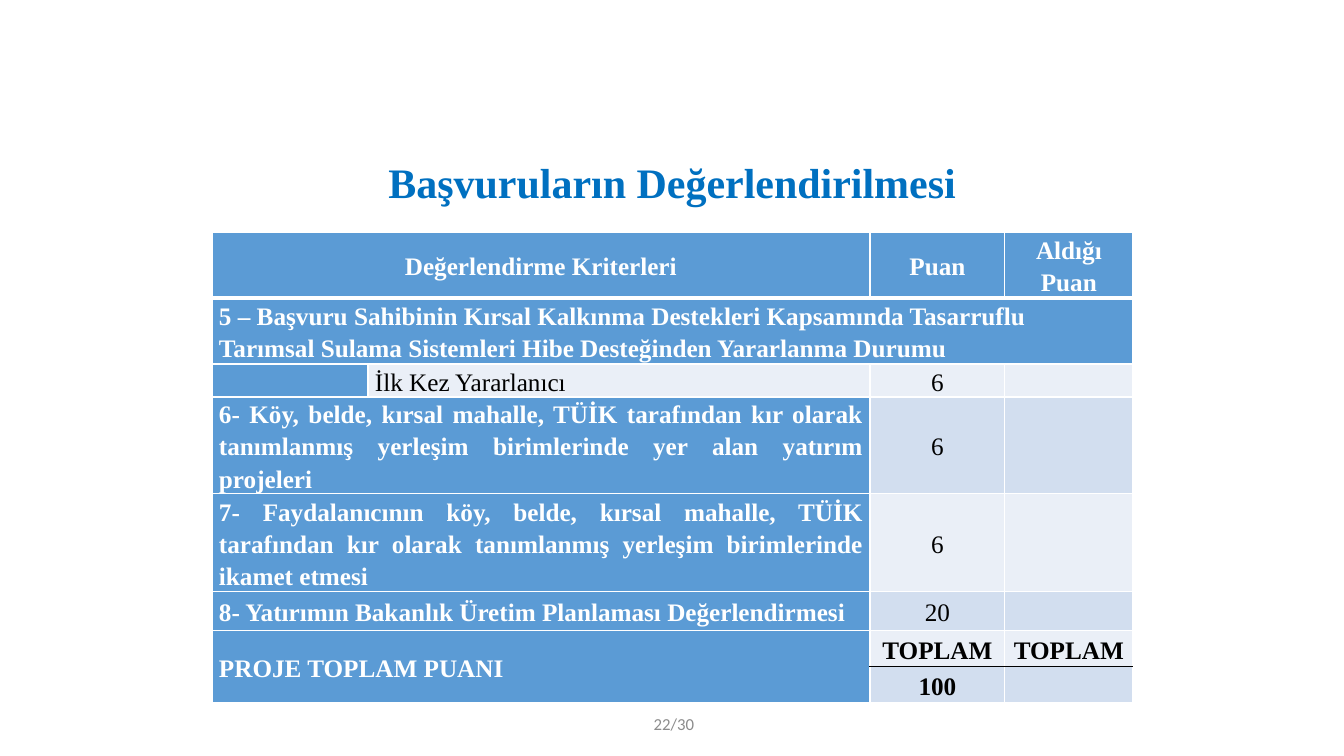
from dataclasses import dataclass

from lxml import etree
from pptx import Presentation
from pptx.dml.color import RGBColor
from pptx.enum.text import MSO_ANCHOR, PP_ALIGN
from pptx.oxml.ns import qn
from pptx.util import Pt

EMU_PER_PX = 914400 / 100.8
MIDDLE = MSO_ANCHOR.MIDDLE
LEFT, CENTER = PP_ALIGN.LEFT, PP_ALIGN.CENTER
RIGHT, JUSTIFY = PP_ALIGN.RIGHT, PP_ALIGN.JUSTIFY
TITLE_ONLY_LAYOUT = 5


@dataclass(frozen=True)
class Theme:
    title: str = "0070C0"
    header: str = "5B9BD5"
    light_band: str = "EAEFF7"
    dark_band: str = "D2DEEF"
    white: str = "FFFFFF"
    black: str = "000000"
    muted: str = "8C8C8C"
    serif: str = "Times New Roman"
    sans: str = "Calibri"
    title_size: int = 30
    table_size: int = 18
    table_leading: int = 23
    number_size: int = 12


THEME = Theme()

COLUMN_WIDTHS = [156, 502, 135, 128]
ROW_HEIGHTS = [66, 66, 33, 96, 98, 39, 36, 36]
MERGES = [(0, 0, 0, 1), (1, 0, 1, 3), (3, 0, 3, 1), (4, 0, 4, 1), (5, 0, 5, 1), (6, 0, 7, 1)]
CRITERIA = [
    ["Değerlendirme Kriterleri", "", "Puan", "Aldığı Puan"],
    ["5 – Başvuru Sahibinin Kırsal Kalkınma Destekleri Kapsamında Tasarruflu "
     "Tarımsal Sulama Sistemleri Hibe Desteğinden Yararlanma Durumu", "", "", ""],
    ["", "İlk Kez Yararlanıcı", "6", ""],
    ["6- Köy, belde, kırsal mahalle, TÜİK tarafından kır olarak tanımlanmış "
     "yerleşim birimlerinde yer alan yatırım projeleri", "", "6", ""],
    ["7- Faydalanıcının köy, belde, kırsal mahalle, TÜİK tarafından kır olarak "
     "tanımlanmış yerleşim birimlerinde ikamet etmesi", "", "6", ""],
    ["8- Yatırımın Bakanlık Üretim Planlaması Değerlendirmesi", "", "20", ""],
    ["PROJE TOPLAM PUANI", "", "TOPLAM", "TOPLAM"],
    ["", "", "100", ""],
]
TOTAL_ROW = 6


def px(length):
    return round(length * EMU_PER_PX)


def write_text(frame, text, *, size, color, font=THEME.serif, bold=False,
               align=LEFT, line_spacing=1.0):
    frame.word_wrap = True
    paragraph = frame.paragraphs[0]
    paragraph.alignment = align
    paragraph.line_spacing = line_spacing
    paragraph.space_before = paragraph.space_after = Pt(0)
    run = paragraph.add_run()
    run.text = text
    run.font.name = font
    run.font.size = Pt(size)
    run.font.bold = bold
    run.font.color.rgb = RGBColor.from_string(color)


def set_borders(cell, **changes):
    """Draws thin white borders; changes maps a side to (colour, points)."""
    properties = cell._tc.get_or_add_tcPr()
    for position, side in enumerate("LRTB"):
        color, points = changes.get(side, (THEME.white, 1))
        line = etree.Element(qn(f"a:ln{side}"), w=str(Pt(points)))
        fill = etree.SubElement(line, qn("a:solidFill"))
        etree.SubElement(fill, qn("a:srgbClr"), val=color)
        properties.insert(position, line)


def add_title(slide, left, top, width, height):
    title = slide.shapes.title
    title.left, title.top, title.width, title.height = map(px, (left, top, width, height))
    title.text_frame.vertical_anchor = MIDDLE
    write_text(title.text_frame, "Başvuruların Değerlendirilmesi", size=THEME.title_size,
               color=THEME.title, bold=True, align=CENTER, line_spacing=0.9)


def format_cell(cell, row, column, text):
    is_header = row < 2 or column == 0 or (column == 1 and row != 2)
    band = THEME.dark_band if row % 2 else THEME.light_band
    cell.fill.solid()
    cell.fill.fore_color.rgb = RGBColor.from_string(THEME.header if is_header else band)
    cell.margin_left = cell.margin_right = px(7)
    cell.margin_top = cell.margin_bottom = 0
    cell.vertical_anchor = MIDDLE

    # Thick rule under the heading, black rule under the total labels
    if row == 0:
        set_borders(cell, B=(THEME.white, 3))
    elif row == 1:
        set_borders(cell, T=(THEME.white, 3))
    elif row == TOTAL_ROW and column > 1:
        set_borders(cell, B=(THEME.black, 1))
    elif row > TOTAL_ROW and column > 1:
        set_borders(cell, T=(THEME.black, 1))
    else:
        set_borders(cell)

    if text:
        if row == 0 or column > 1:
            align = CENTER
        else:
            align = JUSTIFY if row > 2 else LEFT
        write_text(cell.text_frame, text, size=THEME.table_size,
                   color=THEME.white if is_header else THEME.black,
                   bold=is_header or row >= TOTAL_ROW, align=align,
                   line_spacing=Pt(THEME.table_leading))


def add_criteria_table(slide, left, top):
    frame = slide.shapes.add_table(len(ROW_HEIGHTS), len(COLUMN_WIDTHS), px(left), px(top),
                                   px(sum(COLUMN_WIDTHS)), px(sum(ROW_HEIGHTS)))
    table = frame.table
    for column, width in zip(table.columns, COLUMN_WIDTHS):
        column.width = px(width)
    for row, height in zip(table.rows, ROW_HEIGHTS):
        row.height = px(height)
    for first_row, first_column, last_row, last_column in MERGES:
        table.cell(first_row, first_column).merge(table.cell(last_row, last_column))
    for row, texts in enumerate(CRITERIA):
        for column, text in enumerate(texts):
            format_cell(table.cell(row, column), row, column, text)


def add_page_number(slide, left, top, width, height):
    box = slide.shapes.add_textbox(*map(px, (left, top, width, height)))
    box.text_frame.vertical_anchor = MIDDLE
    write_text(box.text_frame, "22/30", size=THEME.number_size, color=THEME.muted,
               font=THEME.sans, align=RIGHT)


def main():
    presentation = Presentation()
    presentation.slide_width, presentation.slide_height = px(1344), px(756)
    slide = presentation.slides.add_slide(presentation.slide_layouts[TITLE_ONLY_LAYOUT])
    add_page_number(slide, 640, 706, 64, 35)
    add_criteria_table(slide, 212, 232)
    add_title(slide, 93, 155, 1159, 60)
    presentation.save("out.pptx")


if __name__ == "__main__":
    main()
